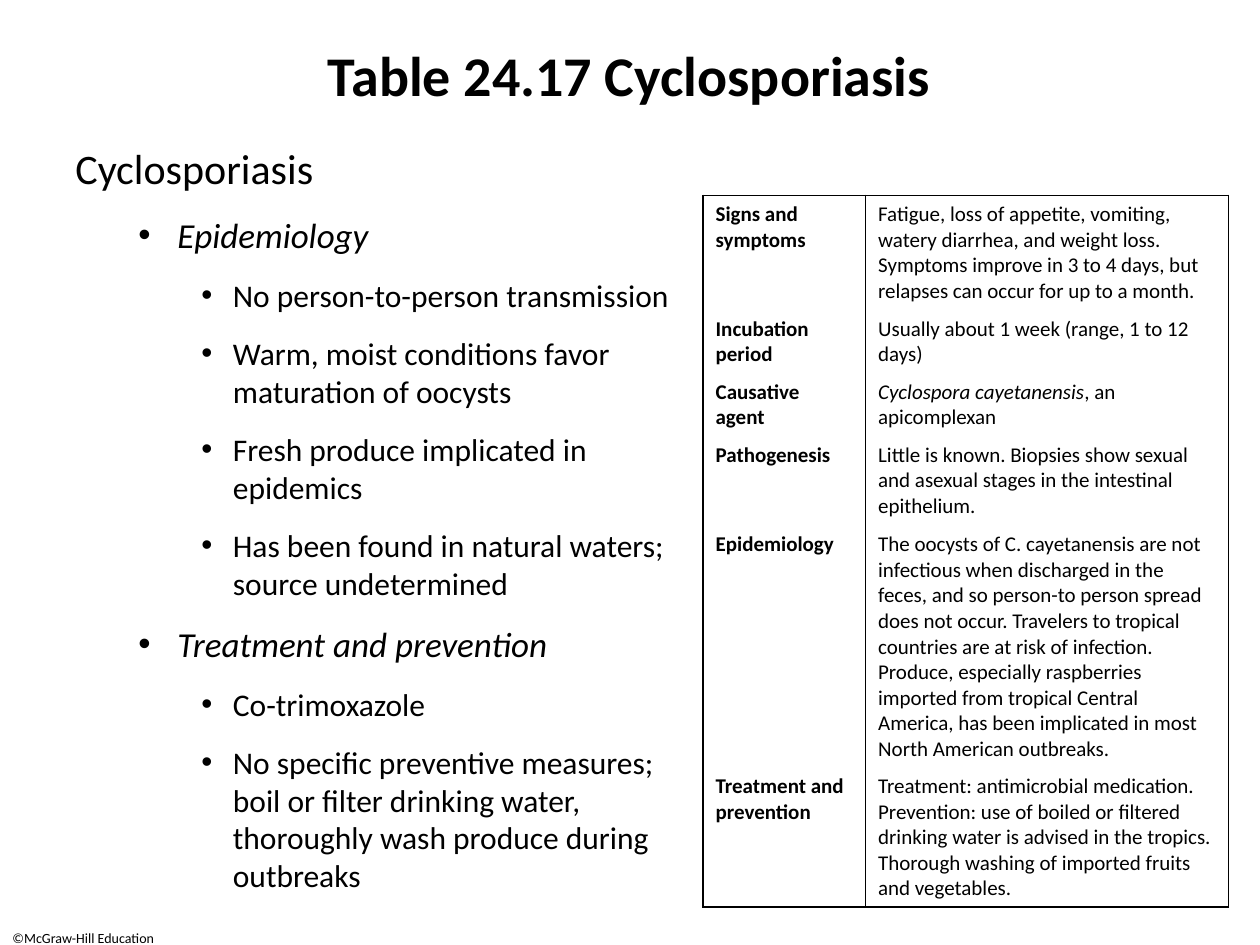
"""Build the cyclosporiasis slide: an outline beside a summary table."""
from lxml import etree
from pptx import Presentation
from pptx.dml.color import RGBColor
from pptx.enum import text as t
from pptx.oxml import ns
from pptx.util import Inches, Pt

BLACK = RGBColor(0, 0, 0)
FONT = "Calibri"
NO_GRID = "{2D5ABB26-0587-4C30-8999-92F81FD0307C}"
LEVELS = [
    dict(size=24),
    dict(size=20, italic=True, left=0.81, hang=0.31),
    dict(size=18, left=1.25, hang=0.25),
]
OUTLINE = [
    (0, "Cyclosporiasis"),
    (1, "Epidemiology"),
    (2, "No person-to-person transmission"),
    (2, "Warm, moist conditions favor maturation of oocysts"),
    (2, "Fresh produce implicated in epidemics"),
    (2, "Has been found in natural waters; source undetermined"),
    (1, "Treatment and prevention"),
    (2, "Co-trimoxazole"),
    (2, "No specific preventive measures; boil or filter drinking water, "
        "thoroughly wash produce during outbreaks"),
]
ROWS = [
    (0.91, "Signs and symptoms", "",
     "Fatigue, loss of appetite, vomiting, watery diarrhea, and weight loss. "
     "Symptoms improve in 3 to 4 days, but relapses can occur for up to a month."),
    (0.5, "Incubation period", "", "Usually about 1 week (range, 1 to 12 days)"),
    (0.5, "Causative agent", "Cyclospora cayetanensis", ", an apicomplexan"),
    (0.71, "Pathogenesis", "",
     "Little is known. Biopsies show sexual and asexual stages in the "
     "intestinal epithelium."),
    (1.92, "Epidemiology", "",
     "The oocysts of C. cayetanensis are not infectious when discharged in the "
     "feces, and so person-to person spread does not occur. Travelers to "
     "tropical countries are at risk of infection. Produce, especially "
     "raspberries imported from tropical Central America, has been implicated "
     "in most North American outbreaks."),
    (1.11, "Treatment and prevention", "",
     "Treatment: antimicrobial medication. Prevention: use of boiled or "
     "filtered drinking water is advised in the tropics. Thorough washing of "
     "imported fruits and vegetables."),
]


def write(para, words, size=12, bold=False, italic=False, align=t.PP_ALIGN.LEFT):
    """Add a run of words to a paragraph."""
    para.alignment = align
    run = para.add_run()
    run.text = words
    font = run.font
    font.name, font.size = FONT, Pt(size)
    font.bold, font.italic = bold, italic
    font.color.rgb = BLACK


def add_box(slide, left, top, width, height, anchor=t.MSO_ANCHOR.TOP):
    """Add a wrapped text box and return its frame."""
    box = slide.shapes.add_textbox(*map(Inches, (left, top, width, height)))
    frame = box.text_frame
    frame.word_wrap = True
    frame.vertical_anchor = anchor
    return frame


def add_dot(para, left, hang):
    """Give a paragraph a hanging bullet."""
    props = para._p.get_or_add_pPr()
    props.set("marL", str(Inches(left)))
    props.set("indent", str(-Inches(hang)))
    etree.SubElement(props, ns.qn("a:buFont"), typeface="Arial")
    etree.SubElement(props, ns.qn("a:buChar"), char="•")


def add_list(slide):
    """Add the outline on the left."""
    frame = add_box(slide, 0.5, 1.08, 4.92, 6.17)
    for num, (level, words) in enumerate(OUTLINE):
        para = frame.add_paragraph() if num else frame.paragraphs[0]
        look = dict(LEVELS[level])
        if level:
            add_dot(para, look.pop("left"), look.pop("hang"))
        para.level = level
        para.space_before = Pt(look["size"] * 0.2 if num else 0)
        para.space_after = Pt(8)
        write(para, words, **look)


def add_edges(cell, sides):
    """Draw the named sides of a cell in black and hide the rest."""
    props = cell._tc.get_or_add_tcPr()
    for side in "LRTB":
        line = etree.SubElement(props, ns.qn(f"a:ln{side}"), w=str(Pt(1)))
        if side in sides:
            fill = etree.SubElement(line, ns.qn("a:solidFill"))
            etree.SubElement(fill, ns.qn("a:srgbClr"), val=str(BLACK))
        else:
            etree.SubElement(line, ns.qn("a:noFill"))
    cell.fill.background()


def add_grid(slide):
    """Add the summary table on the right."""
    frame = slide.shapes.add_table(
        len(ROWS), 2, Inches(5.58), Inches(1.55), Inches(4.17), Inches(5.65))
    table = frame.table
    table.first_row = table.horz_banding = False
    table._tbl.tblPr.find(ns.qn("a:tableStyleId")).text = NO_GRID
    for col, width in zip(table.columns, (1.29, 2.88)):
        col.width = Inches(width)
    for num, (height, head, name, body) in enumerate(ROWS):
        table.rows[num].height = Inches(height)
        sides = "LR" + "T" * (num == 0) + "B" * (num == len(ROWS) - 1)
        left, right = table.rows[num].cells
        for cell in (left, right):
            add_edges(cell, sides)
        write(left.text_frame.paragraphs[0], head, bold=True)
        para = right.text_frame.paragraphs[0]
        if name:
            write(para, name, italic=True)
        write(para, body)


def main():
    """Build and save the slide."""
    deck = Presentation()
    deck.slide_width, deck.slide_height = Inches(10), Inches(7.5)
    slide = deck.slides.add_slide(deck.slide_layouts[6])
    foot = add_box(slide, 0, 7.33, 1.5, 0.17)
    write(foot.paragraphs[0], "©McGraw-Hill Education", size=8)
    title = add_box(slide, 2.43, 0.25, 5.13, 0.67, t.MSO_ANCHOR.MIDDLE)
    write(title.paragraphs[0], "Table 24.17 Cyclosporiasis", size=32, bold=True,
          align=t.PP_ALIGN.CENTER)
    add_list(slide)
    add_grid(slide)
    deck.save("out.pptx")


if __name__ == "__main__":
    main()
